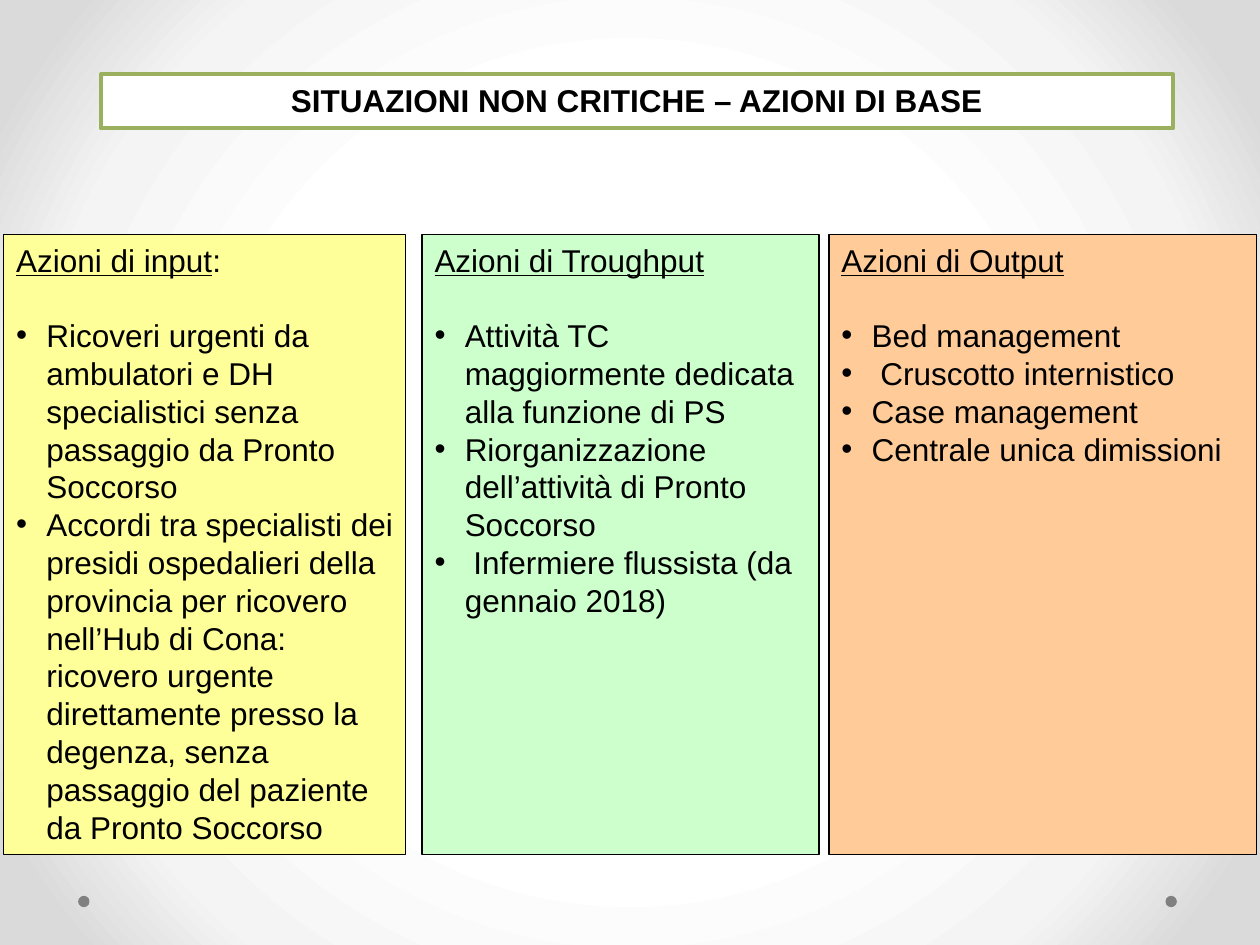
from dataclasses import dataclass

from lxml.etree import SubElement
from pptx import Presentation
from pptx.dml.color import RGBColor
from pptx.enum.shapes import MSO_SHAPE
from pptx.enum.text import MSO_ANCHOR, PP_ALIGN
from pptx.oxml.ns import qn
from pptx.shapes.autoshape import Shape
from pptx.slide import Slide
from pptx.text.text import _Paragraph as Paragraph
from pptx.util import Inches, Pt

COLORS = {
    "black": "000000",
    "white": "FFFFFF",
    "green": "9BB05E",
    "dot": "808080",
    "input": "FFFF99",
    "throughput": "CCFFCC",
    "output": "FFCC99",
}
BACKGROUND_STOPS = ((50, "FFFFFF"), (76, "F4F4F4"), (92, "DADADA"))
LINE_HEIGHT = Pt(21.6)
BULLET_INDENT = Inches(0.24)


@dataclass
class Column:
    left: float
    width: float
    color: str
    heading: str
    actions: tuple[str, ...]
    suffix: str = ""


COLUMNS = (
    Column(0.03, 3.19, "input", "Azioni di input", (
        "Ricoveri urgenti da ambulatori e DH specialistici senza passaggio da Pronto Soccorso",
        "Accordi tra specialisti dei presidi ospedalieri della provincia per ricovero "
        "nell’Hub di Cona: ricovero urgente direttamente presso la degenza, senza "
        "passaggio del paziente da Pronto Soccorso",
    ), ":"),
    Column(3.35, 3.15, "throughput", "Azioni di Troughput", (
        "Attività TC maggiormente dedicata alla funzione di PS",
        "Riorganizzazione dell’attività di Pronto Soccorso",
        " Infermiere flussista (da gennaio 2018)",
    )),
    Column(6.58, 3.39, "output", "Azioni di Output", (
        "Bed management",
        " Cruscotto internistico",
        "Case management",
        "Centrale unica dimissioni",
    )),
)


def paint_background(slide: Slide) -> None:
    fill = slide.background.fill
    fill.gradient()
    gradient = slide.background._cSld.find(".//" + qn("a:gradFill"))
    for child in list(gradient):
        gradient.remove(child)
    stops = SubElement(gradient, qn("a:gsLst"))
    for position, color in BACKGROUND_STOPS:
        stop = SubElement(stops, qn("a:gs"), pos=str(position * 1000))
        SubElement(stop, qn("a:srgbClr"), val=color)
    path = SubElement(gradient, qn("a:path"), path="circle")
    SubElement(path, qn("a:fillToRect"), l="50000", t="50000", r="50000", b="50000")


def add_box(slide: Slide, kind: MSO_SHAPE, left: float, top: float, width: float,
            height: float, fill: str, line: str = "", line_width: float = 0.75) -> Shape:
    shape = slide.shapes.add_shape(
        kind, Inches(left), Inches(top), Inches(width), Inches(height))
    shape.shadow.inherit = False
    shape.fill.solid()
    shape.fill.fore_color.rgb = RGBColor.from_string(COLORS[fill])
    if line:
        shape.line.color.rgb = RGBColor.from_string(COLORS[line])
        shape.line.width = Pt(line_width)
    else:
        shape.line.fill.background()
    shape.text_frame.word_wrap = True
    shape.text_frame.vertical_anchor = MSO_ANCHOR.TOP
    return shape


def add_run(paragraph: Paragraph, text: str, bold: bool = False,
            underline: bool = False) -> None:
    run = paragraph.add_run()
    run.text = text
    run.font.name = "Arial"
    run.font.size = Pt(18)
    run.font.bold = bold
    run.font.underline = underline
    run.font.color.rgb = RGBColor.from_string(COLORS["black"])


def format_paragraph(paragraph: Paragraph, alignment: PP_ALIGN = PP_ALIGN.LEFT) -> None:
    paragraph.alignment = alignment
    paragraph.line_spacing = LINE_HEIGHT


def add_bullet(paragraph: Paragraph) -> None:
    properties = paragraph._p.get_or_add_pPr()
    properties.set("marL", str(BULLET_INDENT))
    properties.set("indent", str(-BULLET_INDENT))
    SubElement(properties, qn("a:buFont"), typeface="Arial")
    SubElement(properties, qn("a:buChar"), char="•")


def add_column(slide: Slide, column: Column) -> None:
    shape = add_box(slide, MSO_SHAPE.RECTANGLE, column.left, 1.86, column.width, 4.92,
                    column.color, "black")
    heading = shape.text_frame.paragraphs[0]
    format_paragraph(heading)
    heading.space_after = LINE_HEIGHT
    add_run(heading, column.heading, underline=True)
    if column.suffix:
        add_run(heading, column.suffix)
    for action in column.actions:
        paragraph = shape.text_frame.add_paragraph()
        format_paragraph(paragraph)
        add_bullet(paragraph)
        add_run(paragraph, action)


def main() -> None:
    presentation = Presentation()
    presentation.slide_width = Inches(10)
    presentation.slide_height = Inches(7.5)
    slide = presentation.slides.add_slide(presentation.slide_layouts[6])
    paint_background(slide)

    for left in (9.25, 0.62):
        add_box(slide, MSO_SHAPE.OVAL, left, 7.11, 0.09, 0.09, "dot")

    title = add_box(slide, MSO_SHAPE.RECTANGLE, 0.8, 0.59, 8.51, 0.43,
                    "white", "green", 2.25)
    paragraph = title.text_frame.paragraphs[0]
    format_paragraph(paragraph, PP_ALIGN.CENTER)
    add_run(paragraph, "SITUAZIONI NON CRITICHE – AZIONI DI BASE", bold=True)

    for column in COLUMNS:
        add_column(slide, column)

    presentation.save("out.pptx")


if __name__ == "__main__":
    main()
